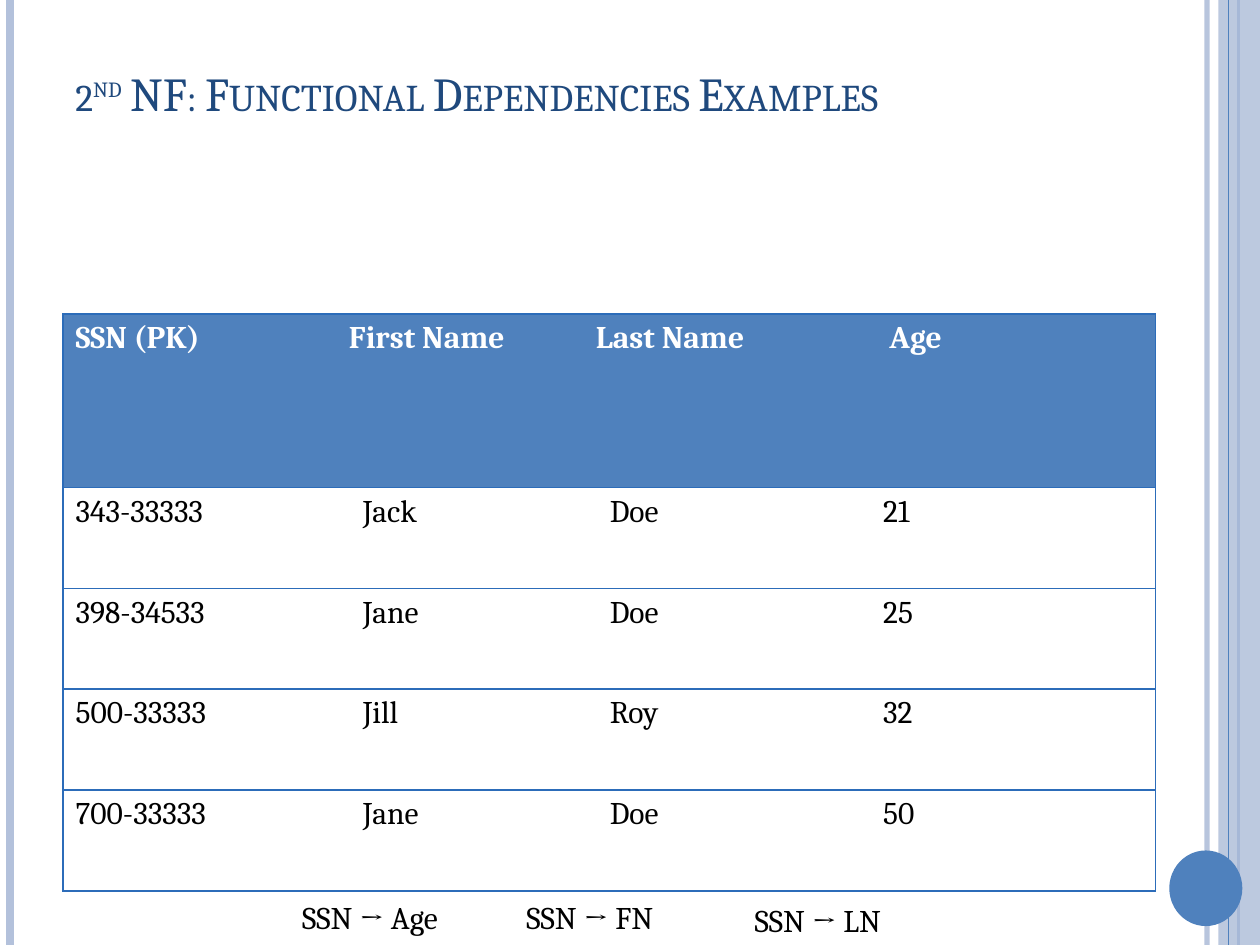
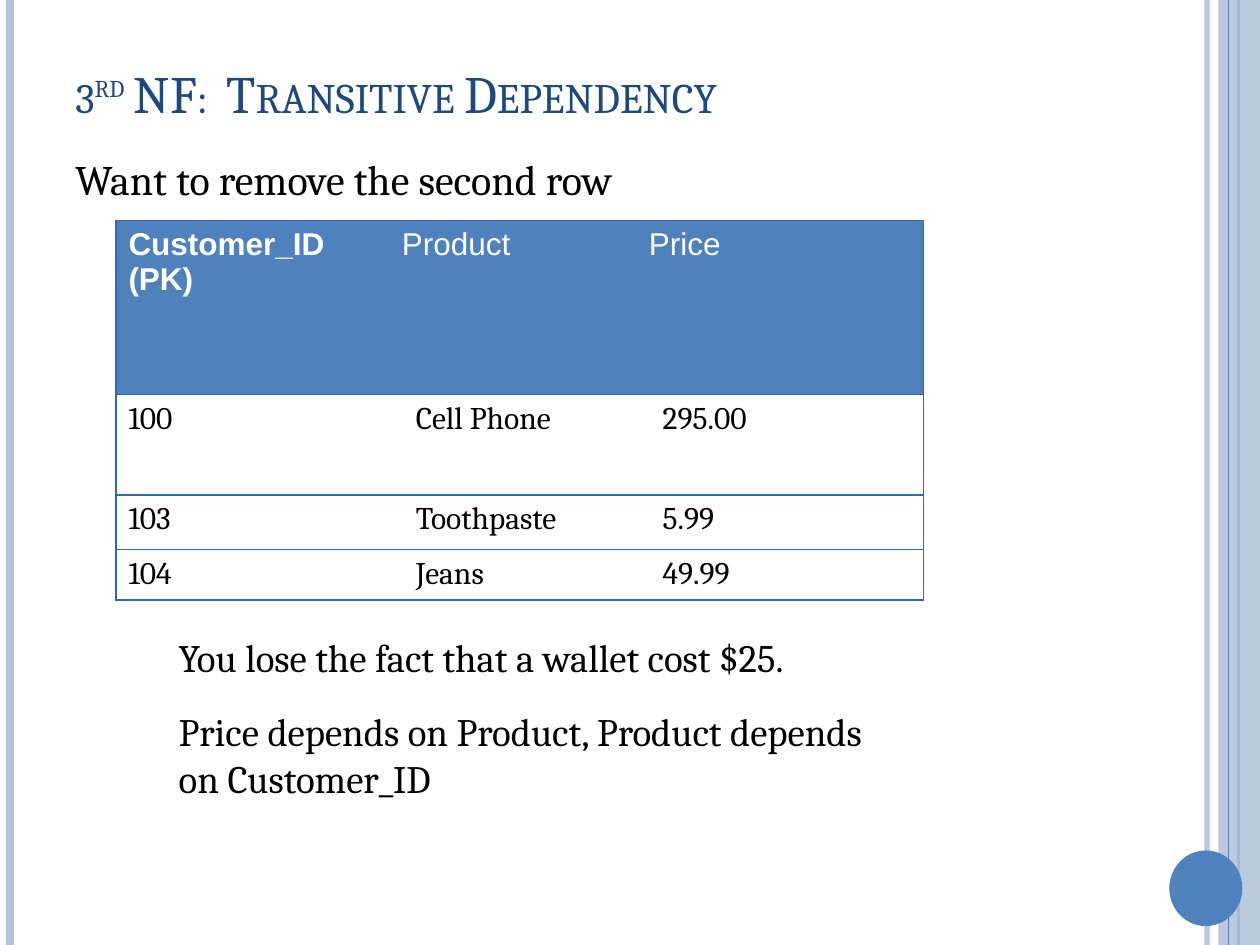
from lxml import etree
from pptx import Presentation
from pptx.dml.color import RGBColor
from pptx.enum.shapes import MSO_CONNECTOR, MSO_SHAPE
from pptx.enum.text import MSO_ANCHOR
from pptx.oxml.ns import qn
from pptx.util import Inches, Pt

LINE = MSO_CONNECTOR.STRAIGHT
RECT = MSO_SHAPE.RECTANGLE
OVAL = MSO_SHAPE.OVAL
MIDDLE = MSO_ANCHOR.MIDDLE

COLORS = {
    "accent": "4F81BD",
    "pale": "B3C1DB",
    "title": "1F497D",
    "border": "2C6CB9",
    "text": "000000",
    "white": "FFFFFF",
}
FONT = "Cambria"
HEADER_HEIGHT = 1.38
ROW_HEIGHT = 0.8
BODY_INDENT = 0.11


def rgb(name):
    return RGBColor.from_string(COLORS[name])


def set_alpha(fill_owner, percent):
    for clr in fill_owner.iter(qn("a:srgbClr")):
        etree.SubElement(clr, qn("a:alpha"), val=str(percent * 1000))


def style_font(font, size, color="text", name=FONT, bold=False):
    font.name = name
    font.size = Pt(size)
    font.bold = bold
    font.color.rgb = rgb(color)


def add_rule(slide, x, color, width, alpha=None):
    line = slide.shapes.add_connector(LINE, Inches(x), 0, Inches(x), Inches(7.5))
    line.line.color.rgb = rgb(color)
    line.line.width = Pt(width)
    sp_pr = line._element.spPr
    if alpha:
        set_alpha(sp_pr, alpha)
    etree.SubElement(sp_pr, qn("a:effectLst"))


def add_block(slide, preset, x, y, w, h, color, alpha=None):
    sp = slide.shapes.add_shape(preset, Inches(x), Inches(y), Inches(w), Inches(h))
    sp.shadow.inherit = False
    sp.fill.solid()
    sp.fill.fore_color.rgb = rgb(color)
    sp.line.fill.background()
    if alpha:
        set_alpha(sp._element.spPr, alpha)


def add_frame(slide):
    add_rule(slide, 9.58, "pale", 3, alpha=93)
    add_rule(slide, 0.08, "pale", 4.5)
    add_rule(slide, 9.83, "accent", 1.5)
    add_block(slide, RECT, 9.67, 0, 0.33, 7.5, "pale", alpha=87)
    add_rule(slide, 9.75, "accent", 0.75)
    add_block(slide, OVAL, 9.28, 6.75, 0.58, 0.6, "accent")


def add_textbox(slide, x, y, w, h):
    box = slide.shapes.add_textbox(Inches(x), Inches(y), Inches(w), Inches(h))
    box.text_frame.word_wrap = True
    return box.text_frame


def add_title(slide, number, suffix, rest, size):
    tf = add_textbox(slide, 0.5, 0.3, 8.67, 0.87)
    tf.vertical_anchor = MIDDLE
    p = tf.paragraphs[0]
    for text, baseline in ((number, 0), (suffix, 30000), (rest, 0)):
        r = p.add_run()
        r.text = text
        style_font(r.font, size, "title")
        r_pr = r._r.get_or_add_rPr()
        r_pr.set("cap", "small")
        r_pr.set("baseline", str(baseline))


def add_text(slide, text, x, y, w, h, size, before=0):
    p = add_textbox(slide, x, y, w, h).paragraphs[0]
    p.text = text
    p.space_before = Pt(before)
    style_font(p.font, size)


def set_borders(cell, first, last):
    tc_pr = cell._tc.get_or_add_tcPr()
    for side, shown in (("L", first), ("R", last), ("T", True), ("B", True)):
        ln = etree.SubElement(tc_pr, qn("a:ln" + side), w=str(Pt(1)))
        if shown:
            fill = etree.SubElement(ln, qn("a:solidFill"))
            etree.SubElement(fill, qn("a:srgbClr"), val=COLORS["border"])
        else:
            etree.SubElement(ln, qn("a:noFill"))


def fill_cell(cell, text, header, indent, font_name=FONT, bold=False):
    cell.margin_left = Inches(0.1 + indent)
    p = cell.text_frame.paragraphs[0]
    p.text = text
    style_font(p.font, 18, "white" if header else "text", font_name, bold)
    if header:
        cell.fill.solid()
        cell.fill.fore_color.rgb = rgb("accent")
    else:
        cell.fill.background()


def add_data_table(slide, x, y, widths, heights, rows, indents,
                   header_font=FONT, bold_headers=4, header_indents=(0, 0, 0, 0)):
    frame = slide.shapes.add_table(len(rows), len(widths), Inches(x), Inches(y),
                                   Inches(sum(widths)), Inches(sum(heights)))
    table = frame.table
    table.first_row = table.horz_banding = False
    for column, width in zip(table.columns, widths):
        column.width = Inches(width)
    for i, (values, height) in enumerate(zip(rows, heights)):
        table.rows[i].height = Inches(height)
        for j, value in enumerate(values):
            cell = table.cell(i, j)
            set_borders(cell, j == 0, j == len(widths) - 1)
            if i == 0:
                fill_cell(cell, value, True, header_indents[j],
                          header_font, j < bold_headers)
            else:
                fill_cell(cell, value, False, indents[j])


def new_slide(prs):
    slide = prs.slides.add_slide(prs.slide_layouts[6])
    add_frame(slide)
    return slide


def build_functional_dependencies(prs):
    slide = new_slide(prs)
    add_title(slide, "2", "nd", " NF: Functional Dependencies Examples", 27)
    people = [
        ("SSN (PK)", "First Name", "Last Name", "Age"),
        ("343-33333", "Jack", "Doe", "21"),
        ("398-34533", "Jane", "Doe", "25"),
        ("500-33333", "Jill", "Roy", "32"),
        ("700-33333", "Jane", "Doe", "50"),
    ]
    add_data_table(slide, 0.5, 2.49, (2.17, 1.96, 2.28, 2.26),
                   [HEADER_HEIGHT] + [ROW_HEIGHT] * 4, people,
                   (0, BODY_INDENT, BODY_INDENT, 0),
                   header_indents=(0, 0, 0, 0.05))
    for target, x, y in (("Age", 2.3, 7.08), ("FN", 4.08, 7.08), ("LN", 5.89, 7.1)):
        add_text(slide, f"SSN → {target}", x, y, 1.63, 0.4, 18)


def build_transitive_dependency(prs):
    slide = new_slide(prs)
    add_title(slide, "3", "rd", " NF:  Transitive Dependency", 30)
    add_text(slide, "Want to remove the second row", 0.5, 1.17, 8.83, 1, 24, before=6)
    purchases = [
        ("Customer_ID (PK)", "Product", "Price"),
        ("100", "Cell Phone", "295.00"),
        ("103", "Toothpaste", "5.99"),
        ("104", "Jeans", "49.99"),
    ]
    add_data_table(slide, 0.92, 1.75, (2.17, 1.96, 2.28),
                   [HEADER_HEIGHT, ROW_HEIGHT, 0.43, 0.39], purchases,
                   (0, BODY_INDENT, BODY_INDENT),
                   header_font="Arial", bold_headers=1)
    remarks = (
        ("You lose the fact that a wallet cost $25.", 4.98),
        ("Price depends on Product, Product depends on Customer_ID", 5.57),
    )
    for text, y in remarks:
        add_text(slide, text, 1.32, y, 6, 0.73, 22.2, before=6)


def main():
    prs = Presentation()
    prs.slide_width = Inches(10)
    prs.slide_height = Inches(7.5)
    build_functional_dependencies(prs)
    build_transitive_dependency(prs)
    prs.save("out.pptx")


if __name__ == "__main__":
    main()
